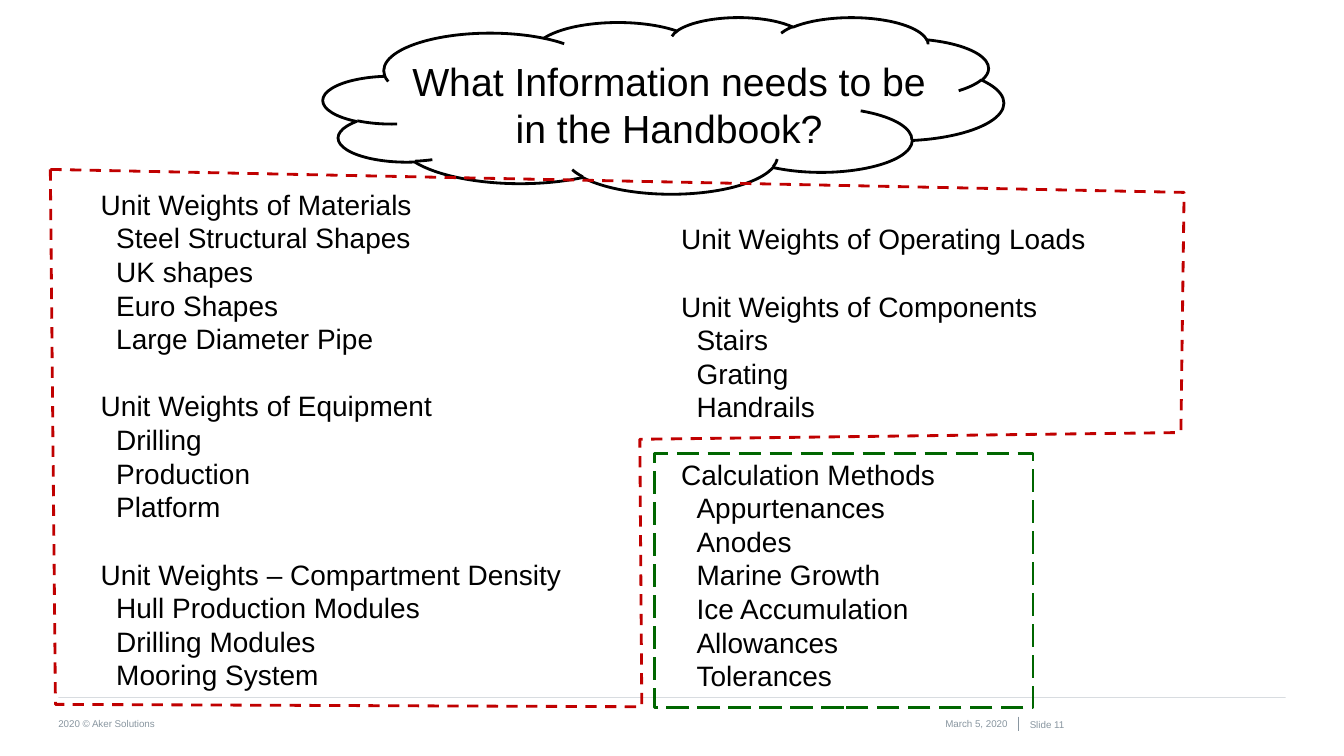
from lxml import etree
from pptx import Presentation
from pptx.dml.color import RGBColor
from pptx.enum.dml import MSO_LINE
from pptx.enum.shapes import MSO_CONNECTOR, MSO_SHAPE
from pptx.enum.text import MSO_ANCHOR, PP_ALIGN
from pptx.oxml.ns import qn
from pptx.util import Cm, Pt

DASH, LONG_DASH = MSO_LINE.DASH, MSO_LINE.LONG_DASH
STRAIGHT = MSO_CONNECTOR.STRAIGHT
CLOUD, RECTANGLE = MSO_SHAPE.CLOUD, MSO_SHAPE.RECTANGLE
TOP, MIDDLE = MSO_ANCHOR.TOP, MSO_ANCHOR.MIDDLE
LEFT, CENTER, RIGHT = PP_ALIGN.LEFT, PP_ALIGN.CENTER, PP_ALIGN.RIGHT

COLORS = {"black": "000000", "grey": "8996A0", "red": "C00000", "green": "006600"}


def add_text(place, lines, size, color="black", align=LEFT, anchor=TOP):
    """Add a text box without margins, one paragraph per line."""
    box = page.shapes.add_textbox(*map(Cm, place))
    frame = box.text_frame
    frame.word_wrap = True
    frame.vertical_anchor = anchor
    frame.margin_left = frame.margin_top = frame.margin_right = frame.margin_bottom = 0
    frame.text = "\n".join(lines)
    for paragraph in frame.paragraphs:
        paragraph.alignment = align
        for span in paragraph.runs:
            span.font.name = "Arial"
            span.font.size = Pt(size)
            span.font.color.rgb = RGBColor.from_string(COLORS[color])
    return frame


def outline(shape, color, dash=None):
    """Leave only a 2 pt outline on the shape."""
    shape.shadow.inherit = False
    shape.fill.background()
    shape.line.color.rgb = RGBColor.from_string(COLORS[color])
    shape.line.width = Pt(2)
    if dash:
        shape.line.dash_style = dash


deck = Presentation()
deck.slide_width, deck.slide_height = Cm(33.88), Cm(19.05)
page = deck.slides.add_slide(deck.slide_layouts[6])

# Footer
footer = [
    ((1.47, 18.08, 7.21, 0.33), "2020 © Aker Solutions", LEFT),
    ((22.05, 18.06, 3.35, 0.36), "March 5, 2020", RIGHT),
    ((25.96, 18.08, 1.9, 0.36), "Slide 11", LEFT),
]
for place, text, align in footer:
    add_text(place, [text], 7, "grey", align, MIDDLE)

rules = [((1.47, 17.58, 32.41, 17.58), 50), ((25.68, 18.06, 25.68, 18.42), 100)]
for ends, opacity in rules:
    rule = page.shapes.add_connector(STRAIGHT, *map(Cm, ends))
    rule.line.width = Pt(0.5)
    rule.line.color.rgb = RGBColor.from_string(COLORS["grey"])
    color_element = rule.line._ln.find(".//" + qn("a:srgbClr"))
    etree.SubElement(color_element, qn("a:alpha"), val=str(opacity * 1000))
    etree.SubElement(rule._element.spPr, qn("a:effectLst"))

# Title in a cloud
add_text((10.39, 1.45, 12.95, 2.39),
         ["What Information needs to be", "in the Handbook?"], 28, align=CENTER)
cloud = page.shapes.add_shape(CLOUD, Cm(8.15), Cm(0.43), Cm(17.15), Cm(4.45))
outline(cloud, "black")

# Topic columns
columns = [
    ((2.54, 4.72, 11.71, 12.83), {
        "Unit Weights of Materials": [
            "Steel Structural Shapes", "UK shapes", "Euro Shapes", "Large Diameter Pipe"],
        "Unit Weights of Equipment": ["Drilling", "Production", "Platform"],
        "Unit Weights – Compartment Density": [
            "Hull Production Modules", "Drilling Modules", "Mooring System"],
    }),
    ((17.17, 5.59, 10.26, 11.96), {
        "Unit Weights of Operating Loads": [],
        "Unit Weights of Components": ["Stairs", "Grating", "Handrails"],
        "Calculation Methods": [
            "Appurtenances", "Anodes", "Marine Growth", "Ice Accumulation",
            "Allowances", "Tolerances"],
    }),
]
for place, topics in columns:
    lines = [line for heading, items in topics.items() for line in [heading, *items]]
    frame = add_text(place, lines, 20)
    for number, paragraph in enumerate(frame.paragraphs):
        if paragraph.text not in topics:
            paragraph._p.get_or_add_pPr().set("marL", str(Cm(0.39)))
        elif number > 0:
            paragraph.space_before = Pt(24)

# Frames around the unit weights and the calculation methods
corners = [(1.27, 4.27), (1.4, 17.75), (16.18, 17.81),
           (16.13, 11.07), (29.77, 10.9), (29.85, 4.85)]
start, *others = [(Cm(x), Cm(y)) for x, y in corners]
builder = page.shapes.build_freeform(*start)
builder.add_line_segments(others, close=True)
outline(builder.convert_to_shape(), "red", DASH)

methods = page.shapes.add_shape(RECTANGLE, Cm(16.51), Cm(11.43), Cm(9.53), Cm(6.4))
outline(methods, "green", LONG_DASH)

deck.save("out.pptx")
